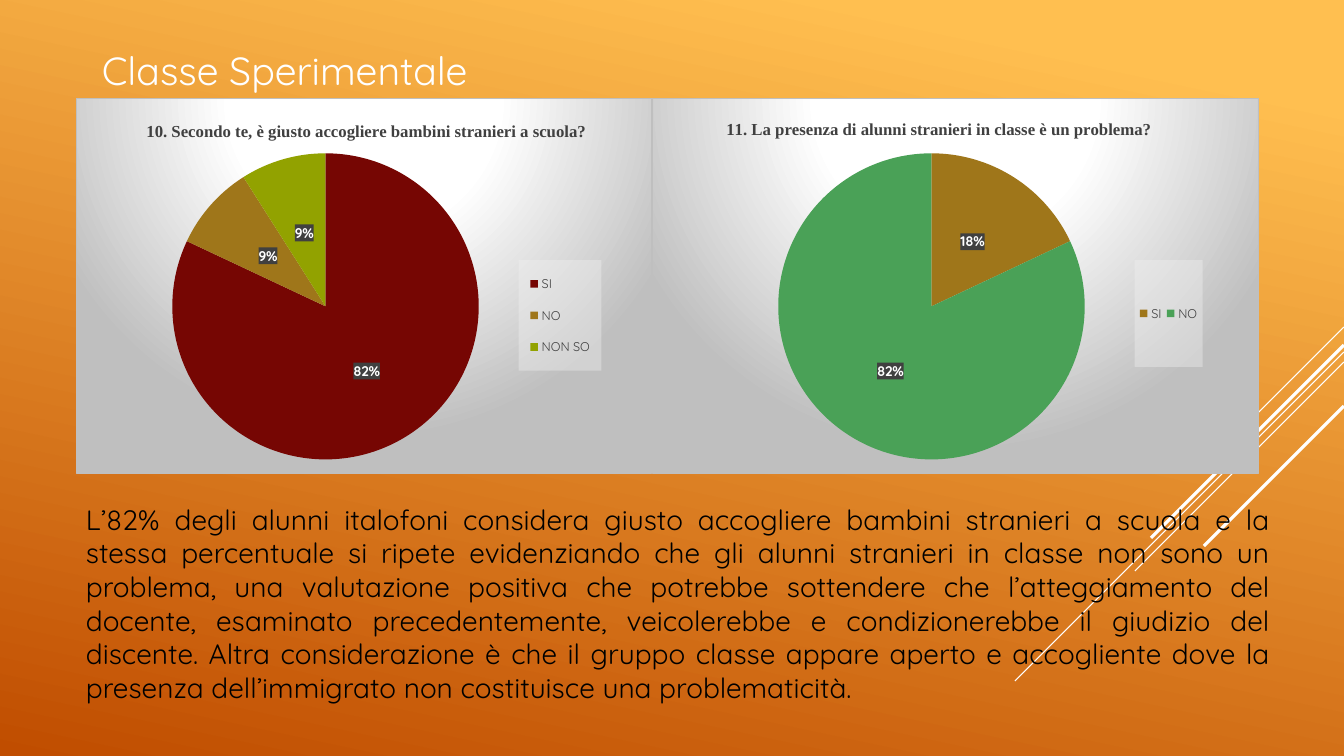
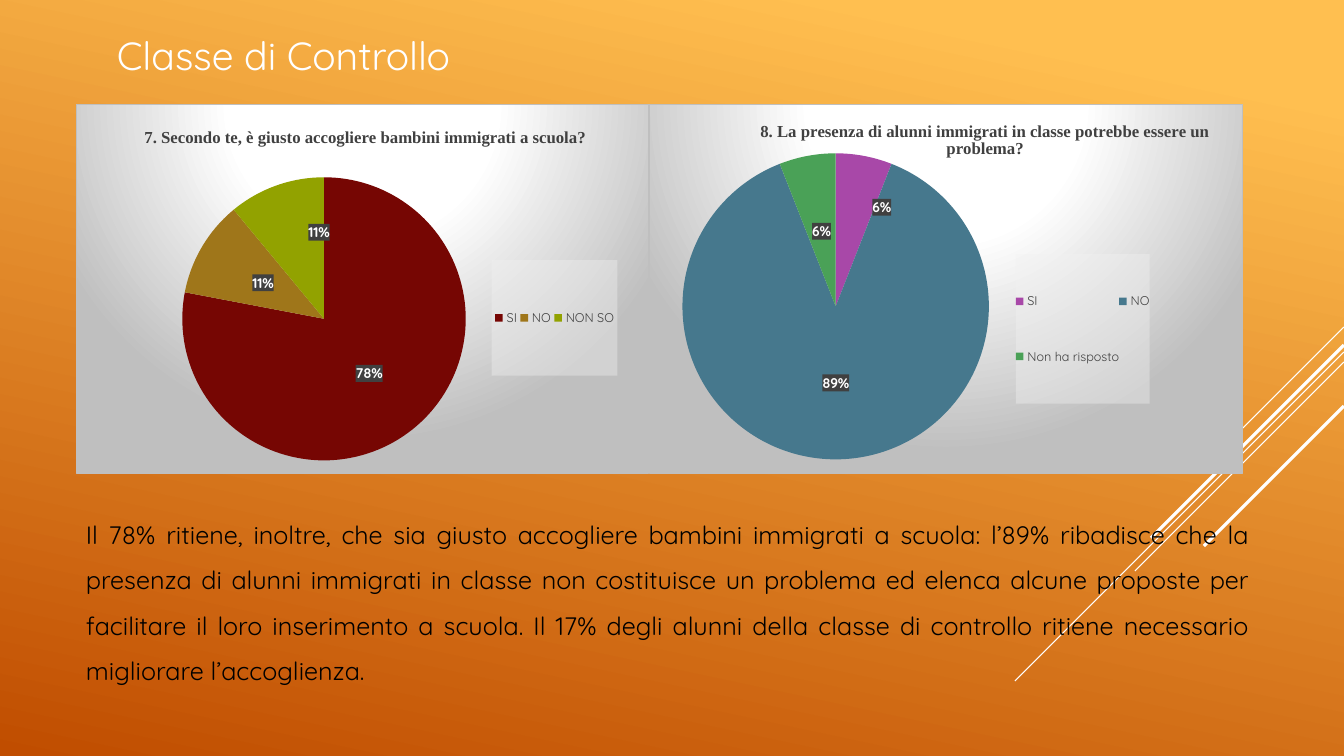
from copy import deepcopy

from lxml import etree
from pptx import Presentation
from pptx.chart.data import CategoryChartData
from pptx.dml.color import RGBColor
from pptx.enum.chart import XL_CHART_TYPE, XL_LABEL_POSITION, XL_LEGEND_POSITION
from pptx.enum.shapes import MSO_CONNECTOR
from pptx.enum.text import MSO_ANCHOR, PP_ALIGN
from pptx.oxml import parse_xml
from pptx.oxml.ns import nsdecls, qn
from pptx.util import Emu, Pt

PX = 914400 / 100.8
WIDTH, HEIGHT = 1344, 756
FONT, CHART_TITLE_FONT = "Quicksand", "Times New Roman"
WHITE, BLACK, GREY, DARK = "FFFFFF", "000000", "BFBFBF", "404040"
RED, BROWN, OLIVE, GREEN = "760603", "9F761A", "92A200", "4AA157"
PURPLE, BLUE = "A848A8", "46788D"
BACKGROUND = [(0.1, "FFBF50"), (1, "C04D00")]

# Diagonals at 45 degrees from the right edge: top, extent, weight in points
DIAGONALS = [(327, 101, 0.75), (352, 329, 0.75), (362, 209, 0.75),
             (345, 193, 2.25), (406, 140, 2.25)]

# Boxes are left, top, width, height in px on the slide.
# "moved" maps an answer's index to the shift of its label.
SLIDES = [
    {
        "heading": "Classe Sperimentale",
        "heading_box": (92, 34, 513, 64),
        "comment": "L’82% degli alunni italofoni considera giusto accogliere bambini "
                   "stranieri a scuola e la stessa percentuale si ripete evidenziando che "
                   "gli alunni stranieri in classe non sono un problema, una valutazione "
                   "positiva che potrebbe sottendere che l’atteggiamento del docente, "
                   "esaminato precedentemente, veicolerebbe e condizionerebbe il giudizio "
                   "del discente. Altra considerazione è che il gruppo classe appare aperto "
                   "e accogliente dove la presenza dell’immigrato non costituisce una "
                   "problematicità.",
        "comment_box": (76, 495, 1204, 216),
        "comment_size": 20,
        "comment_spacing": 1.0,
        "charts": [
            {"question": "10. Secondo te, è giusto accogliere bambini stranieri a scuola?",
             "answers": [("SI", 82, RED), ("NO", 9, BROWN), ("NON SO", 9, OLIVE)],
             "box": (76, 98, 576, 376), "title_at": (143, 117),
             "pie": (172, 153, 307, 307), "legend": (519, 260, 83, 111), "moved": {}},
            {"question": "11. La presenza di alunni stranieri in classe è un problema?",
             "answers": [("SI", 18, BROWN), ("NO", 82, GREEN)],
             "box": (652, 98, 607, 376), "title_at": (723, 115),
             "pie": (778, 153, 307, 307), "legend": (1135, 260, 68, 107), "moved": {}},
        ],
    },
    {
        "heading": "Classe di Controllo",
        "heading_box": (107, 19, 513, 64),
        "comment": "Il 78% ritiene, inoltre, che sia giusto accogliere bambini immigrati a "
                   "scuola: l’89% ribadisce che la presenza di alunni immigrati in classe "
                   "non costituisce un problema ed elenca alcune proposte per facilitare il "
                   "loro inserimento a scuola. Il 17% degli alunni della classe di controllo "
                   "ritiene necessario migliorare l’accoglienza.",
        "comment_box": (76, 495, 1183, 200),
        "comment_size": 18,
        "comment_spacing": 1.5,
        "charts": [
            {"question": "7. Secondo te, è giusto accogliere bambini immigrati a scuola?",
             "answers": [("SI", 78, RED), ("NO", 11, BROWN), ("NON SO", 11, OLIVE)],
             "box": (76, 104, 573, 370), "title_at": (141, 123),
             "pie": (182, 177, 284, 284), "legend": (492, 260, 126, 116),
             "moved": {2: (19, -20)}},
            {"question": "8. La presenza di alunni immigrati in classe potrebbe essere un problema?",
             "answers": [("SI", 6, PURPLE), ("NO", 89, BLUE), ("Non ha risposto", 6, GREEN)],
             "box": (649, 104, 594, 370), "title_at": (757, 117),
             "pie": (682, 153, 307, 307), "legend": (1016, 254, 134, 150),
             "moved": {0: (32, -24)}},
        ],
    },
]


def px(*lengths):
    return [Emu(round(length * PX)) for length in lengths]


def rgb(hex_colour):
    return RGBColor.from_string(hex_colour)


def style(font, size, colour, name=FONT, bold=False):
    font.size, font.name, font.bold = Pt(size), name, bold
    font.color.rgb = rgb(colour)


def panel_fill(colour, opacity):
    """Chart-part properties with a translucent fill."""
    return parse_xml(
        f'<c:spPr {nsdecls("c", "a")}><a:solidFill><a:srgbClr val="{colour}">'
        f'<a:alpha val="{opacity * 1000}"/></a:srgbClr></a:solidFill></c:spPr>')


def glow_fill():
    """Chart-area properties: white glow from above, thin grey border."""
    stops = "".join(f'<a:gs pos="{position * 1000}"><a:srgbClr val="{colour}"/></a:gs>'
                    for position, colour in [(0, WHITE), (39, WHITE), (100, GREY)])
    return parse_xml(
        f'<c:spPr {nsdecls("c", "a")}><a:gradFill><a:gsLst>{stops}</a:gsLst>'
        '<a:path path="circle">'
        '<a:fillToRect l="50000" t="-80000" r="50000" b="180000"/></a:path></a:gradFill>'
        f'<a:ln w="9525"><a:solidFill><a:srgbClr val="{GREY}"/></a:solidFill></a:ln></c:spPr>')


def layout(chart_box, offset, size=(), modes=True, inner=False):
    """Manual layout, with px turned into fractions of the chart."""
    parts = ['<c:layoutTarget val="inner"/>'] if inner else []
    if modes:
        parts += ['<c:xMode val="edge"/>', '<c:yMode val="edge"/>']
    fractions = zip("xywh", (*offset, *size), chart_box[2:] * 2)
    parts += [f'<c:{key} val="{length / whole:.4f}"/>' for key, length, whole in fractions]
    return parse_xml(f'<c:layout {nsdecls("c")}><c:manualLayout>{"".join(parts)}'
                     '</c:manualLayout></c:layout>')


def place(part, chart_box, box, index, inner=False):
    """Give a chart part its own layout as child number index."""
    for old in part.findall(qn("c:layout")):
        part.remove(old)
    offset = [box[i] - chart_box[i] for i in range(2)]
    part.insert(index, layout(chart_box, offset, box[2:], inner=inner))


def move_label(labels, chart_box, index, shift):
    label = etree.SubElement(labels, qn("c:dLbl"))
    etree.SubElement(label, qn("c:idx")).set("val", str(index))
    label.append(layout(chart_box, shift, modes=False))
    for child in labels:
        if child.tag not in (qn("c:dLbl"), qn("c:showLeaderLines")):
            label.append(deepcopy(child))
    labels.insert(0, label)


def add_pie(slide, survey):
    names, values, colours = zip(*survey["answers"])
    box = survey["box"]
    data = CategoryChartData()
    data.categories = names
    data.add_series("Series 1", values)
    chart = slide.shapes.add_chart(XL_CHART_TYPE.PIE, *px(*box), data).chart
    style(chart.font, 10, WHITE)

    chart.has_title = True
    question = chart.chart_title.text_frame.paragraphs[0].add_run()
    question.text = survey["question"]
    style(question.font, 12, DARK, CHART_TITLE_FONT, True)

    chart.has_legend = True
    chart.legend.position = XL_LEGEND_POSITION.RIGHT
    chart.legend.include_in_layout = False
    style(chart.legend.font, 9, DARK)

    plot = chart.plots[0]
    plot.vary_by_categories = True
    series = plot.series[0]
    for index, colour in enumerate(colours):
        slice_format = series.points[index].format
        slice_format.fill.solid()
        slice_format.fill.fore_color.rgb = rgb(colour)
        slice_format.line.fill.background()

    labels = series.data_labels
    labels.show_value = True
    labels.number_format, labels.number_format_is_linked = '0"%"', False
    labels.position = XL_LABEL_POSITION.CENTER
    style(labels.font, 10, WHITE, bold=True)

    space = chart._chartSpace
    space.find(qn("c:chart")).addnext(glow_fill())
    place(next(space.iter(qn("c:title"))), box, survey["title_at"], 1)
    place(next(space.iter(qn("c:plotArea"))), box, survey["pie"], 0, inner=True)
    legend = next(space.iter(qn("c:legend")))
    place(legend, box, survey["legend"], 1)
    legend.find(qn("c:overlay")).addnext(panel_fill("F2F2F2", 39))
    label_group = next(space.iter(qn("c:dLbls")))
    label_group.find(qn("c:txPr")).addprevious(panel_fill(DARK, 90))
    for index, shift in survey["moved"].items():
        move_label(label_group, box, index, shift)


def add_text(slide, box, text, size, colour, anchor):
    frame = slide.shapes.add_textbox(*px(*box)).text_frame
    frame.word_wrap = True
    frame.vertical_anchor = anchor
    paragraph = frame.paragraphs[0]
    run = paragraph.add_run()
    run.text = text
    style(run.font, size, colour)
    return paragraph


def add_backdrop(slide):
    fill = slide.background.fill
    fill.gradient()
    fill.gradient_angle = 360 - 102
    for stop, (position, colour) in zip(fill.gradient_stops, BACKGROUND):
        stop.position = position
        stop.color.rgb = rgb(colour)
    for top, extent, weight in DIAGONALS:
        diagonal = slide.shapes.add_connector(
            MSO_CONNECTOR.STRAIGHT, *px(WIDTH, top, WIDTH - extent, top + extent))
        diagonal.line.color.rgb = rgb(WHITE)
        diagonal.line.width = Pt(weight)
        etree.SubElement(diagonal.element.spPr, qn("a:effectLst"))


def main():
    deck = Presentation()
    deck.slide_width, deck.slide_height = px(WIDTH, HEIGHT)
    for content in SLIDES:
        slide = deck.slides.add_slide(deck.slide_layouts[6])
        add_backdrop(slide)
        comment = add_text(slide, content["comment_box"], content["comment"],
                           content["comment_size"], BLACK, MSO_ANCHOR.MIDDLE)
        comment.alignment = PP_ALIGN.JUSTIFY
        comment.line_spacing = content["comment_spacing"]
        add_text(slide, content["heading_box"], content["heading"], 28, WHITE,
                 MSO_ANCHOR.BOTTOM)
        for survey in content["charts"]:
            add_pie(slide, survey)
    deck.save("out.pptx")


if __name__ == "__main__":
    main()
